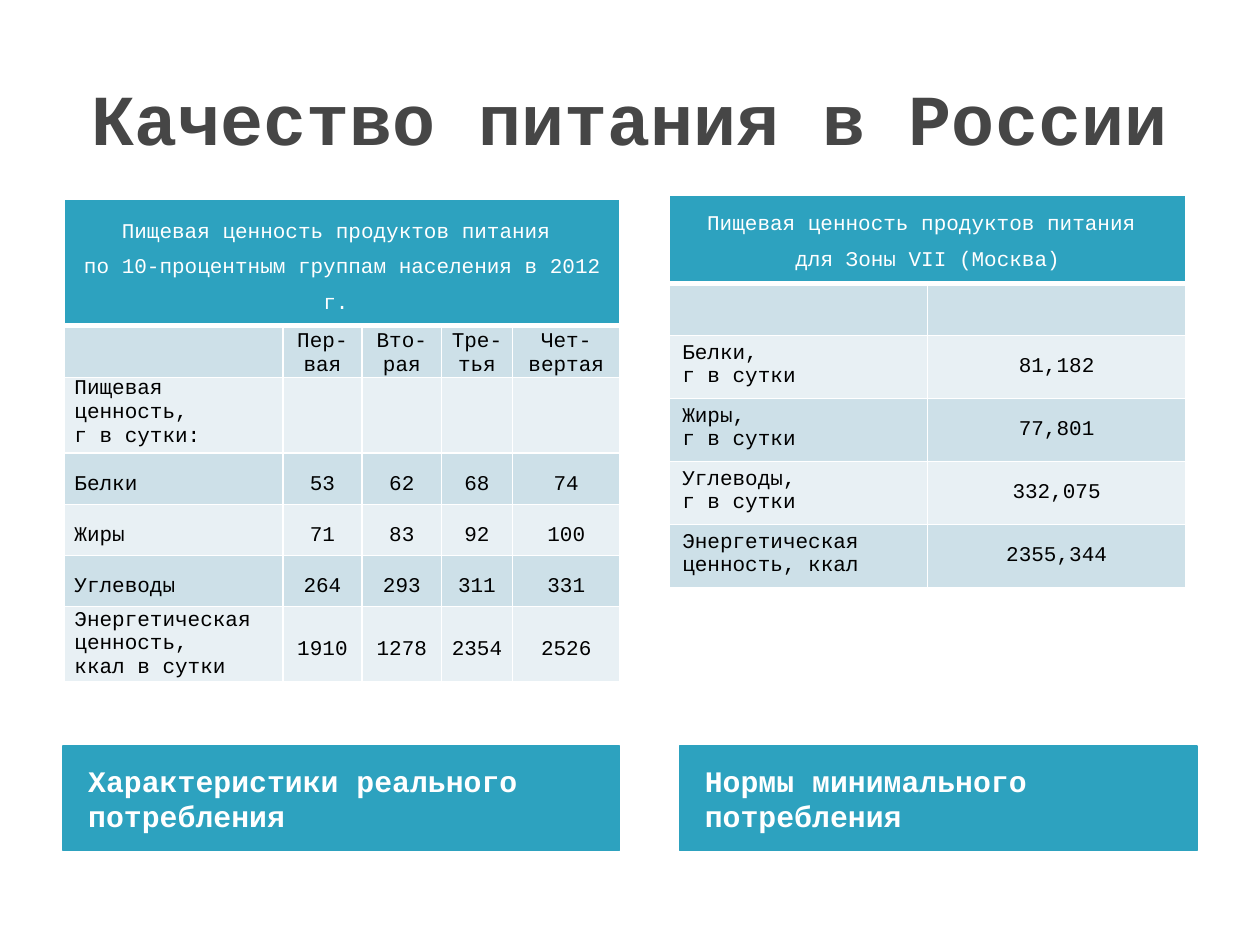
from lxml import etree
from pptx import Presentation
from pptx.dml.color import RGBColor
from pptx.enum.shapes import MSO_SHAPE
from pptx.enum.text import MSO_ANCHOR, PP_ALIGN
from pptx.oxml.ns import qn
from pptx.util import Cm, Pt

RECTANGLE = MSO_SHAPE.RECTANGLE
TOP, MIDDLE, BOTTOM = MSO_ANCHOR.TOP, MSO_ANCHOR.MIDDLE, MSO_ANCHOR.BOTTOM
LEFT, CENTER = PP_ALIGN.LEFT, PP_ALIGN.CENTER
TEAL = RGBColor(0x2D, 0xA2, 0xBF)
BAND_DARK = RGBColor(0xCD, 0xE0, 0xE8)
BAND_LIGHT = RGBColor(0xE8, 0xF0, 0xF4)
GRAY = RGBColor(0x46, 0x46, 0x46)
BLACK = RGBColor(0, 0, 0)
WHITE = RGBColor(0xFF, 0xFF, 0xFF)
FONT = "Courier New"

CONSUMPTION_TITLE = ("Пищевая ценность продуктов питания \n"
                     "по 10-процентным группам населения в 2012 г. ")
CONSUMPTION = [
    ("", "Пер-вая", "Вто-рая", "Тре-тья", "Чет-вертая"),
    ("Пищевая ценность,\nг в сутки:", "", "", "", ""),
    ("Белки", "53", "62", "68", "74"),
    ("Жиры", "71", "83", "92", "100"),
    ("Углеводы", "264", "293", "311", "331"),
    ("Энергетическая ценность,\nккал в сутки", "1910", "1278", "2354", "2526"),
]
NORMS_TITLE = "Пищевая ценность продуктов питания \nдля Зоны VII (Москва)"
NORMS = [
    ("", ""),
    ("Белки,\nг в сутки", "81,182"),
    ("Жиры,\nг в сутки", "77,801"),
    ("Углеводы,\nг в сутки", "332,075"),
    ("Энергетическая ценность, ккал", "2355,344"),
]


def write(text_frame, text, size, color, bold=False, align=LEFT, spacing=None):
    """Fill the first paragraph of a text frame and style it."""
    paragraph = text_frame.paragraphs[0]
    paragraph.text = text
    paragraph.alignment = align
    paragraph.line_spacing = spacing
    paragraph.font.name = FONT
    paragraph.font.size = Pt(size)
    paragraph.font.bold = bold
    paragraph.font.color.rgb = color
    return paragraph


def set_borders(cell, top=1, bottom=1):
    """Draw white borders, in points, around a cell."""
    properties = cell._tc.get_or_add_tcPr()
    widths = {"a:lnL": 1, "a:lnR": 1, "a:lnT": top, "a:lnB": bottom}
    for index, (tag, width) in enumerate(widths.items()):
        line = etree.Element(qn(tag), w=str(Pt(width)))
        fill = etree.SubElement(line, qn("a:solidFill"))
        etree.SubElement(fill, qn("a:srgbClr"), val=str(WHITE))
        properties.insert(index, line)


def add_title(slide, left, top, width, height):
    """Place the slide title."""
    text_frame = slide.shapes.add_textbox(left, top, width, height).text_frame
    text_frame.word_wrap = True
    text_frame.vertical_anchor = MIDDLE
    write(text_frame, "Качество питания в России", 41, GRAY, True, CENTER)


def add_caption(slide, left, top, width, height, text):
    """Place a filled caption bar."""
    shape = slide.shapes.add_shape(RECTANGLE, left, top, width, height)
    shape.shadow.inherit = False
    shape.fill.solid()
    shape.fill.fore_color.rgb = TEAL
    shape.line.color.rgb = TEAL
    shape.line.width = Pt(0.75)
    text_frame = shape.text_frame
    text_frame.word_wrap = True
    text_frame.vertical_anchor = MIDDLE
    text_frame.margin_left = Cm(0.51)
    write(text_frame, text, 17, WHITE, True).space_before = Pt(4)


def add_banded_table(slide, left, top, widths, heights, title, rows):
    """Place a table with a merged title row above banded rows."""
    columns = len(widths)
    frame = slide.shapes.add_table(len(heights), columns, left, top,
                                   Cm(sum(widths)), Cm(sum(heights)))
    table = frame.table
    table.first_row = table.horz_banding = False
    for column, width in zip(table.columns, widths):
        column.width = Cm(width)
    for row, height in zip(table.rows, heights):
        row.height = Cm(height)
    table.cell(0, 0).merge(table.cell(0, columns - 1))
    write(table.cell(0, 0).text_frame, title, 12, WHITE, align=CENTER, spacing=1.5)
    for row_index, row in enumerate(table.rows):
        for column_index, cell in enumerate(row.cells):
            cell.fill.solid()
            if row_index == 0:
                cell.fill.fore_color.rgb = TEAL
                set_borders(cell, bottom=3)
                continue
            cell.fill.fore_color.rgb = BAND_DARK if row_index % 2 else BAND_LIGHT
            set_borders(cell, top=3 if row_index == 1 else 1)
            cell.vertical_anchor = MIDDLE if column_index else TOP
            write(cell.text_frame, rows[row_index - 1][column_index], 12, BLACK,
                  align=CENTER if column_index else LEFT)
    return table


def add_consumption_table(slide, left, top):
    """Place the table of real consumption by population group."""
    table = add_banded_table(slide, left, top, [4.4, 1.6, 1.6, 1.43, 2.17],
                             [2.38, 1.05, 1.43, 1.03, 1.03, 1.03, 1.43],
                             CONSUMPTION_TITLE, CONSUMPTION)
    table.cell(0, 0).vertical_anchor = MIDDLE
    for row_index, values in enumerate(CONSUMPTION, 1):
        for column_index, value in enumerate(values):
            if not value:
                continue
            cell = table.cell(row_index, column_index)
            cell.margin_left = 0 if column_index else Cm(0.2)
            cell.margin_right = cell.margin_top = cell.margin_bottom = 0
            cell.vertical_anchor = {1: BOTTOM, 2: TOP}.get(row_index, MIDDLE)
            if row_index > 2 and "\n" not in value:
                cell.text_frame.paragraphs[0].line_spacing = 1.5


def add_norms_table(slide, left, top):
    """Place the table of minimum consumption norms."""
    add_banded_table(slide, left, top, [5.2] * 2, [1.67, 1.05] + [1.21] * 4,
                     NORMS_TITLE, NORMS)


def main():
    """Build and save the slide."""
    presentation = Presentation()
    presentation.slide_width, presentation.slide_height = Cm(25.4), Cm(19.05)
    slide = presentation.slides.add_slide(presentation.slide_layouts[6])
    add_title(slide, Cm(1.27), Cm(0.76), Cm(22.86), Cm(3.18))
    add_caption(slide, Cm(1.27), Cm(15.04), Cm(11.22), Cm(2.1),
                "Характеристики реального потребления")
    add_caption(slide, Cm(13.7), Cm(15.04), Cm(10.43), Cm(2.1),
                "Нормы минимального потребления")
    add_consumption_table(slide, Cm(1.3), Cm(4.02))
    add_norms_table(slide, Cm(13.5), Cm(3.93))
    presentation.save("out.pptx")


if __name__ == "__main__":
    main()
